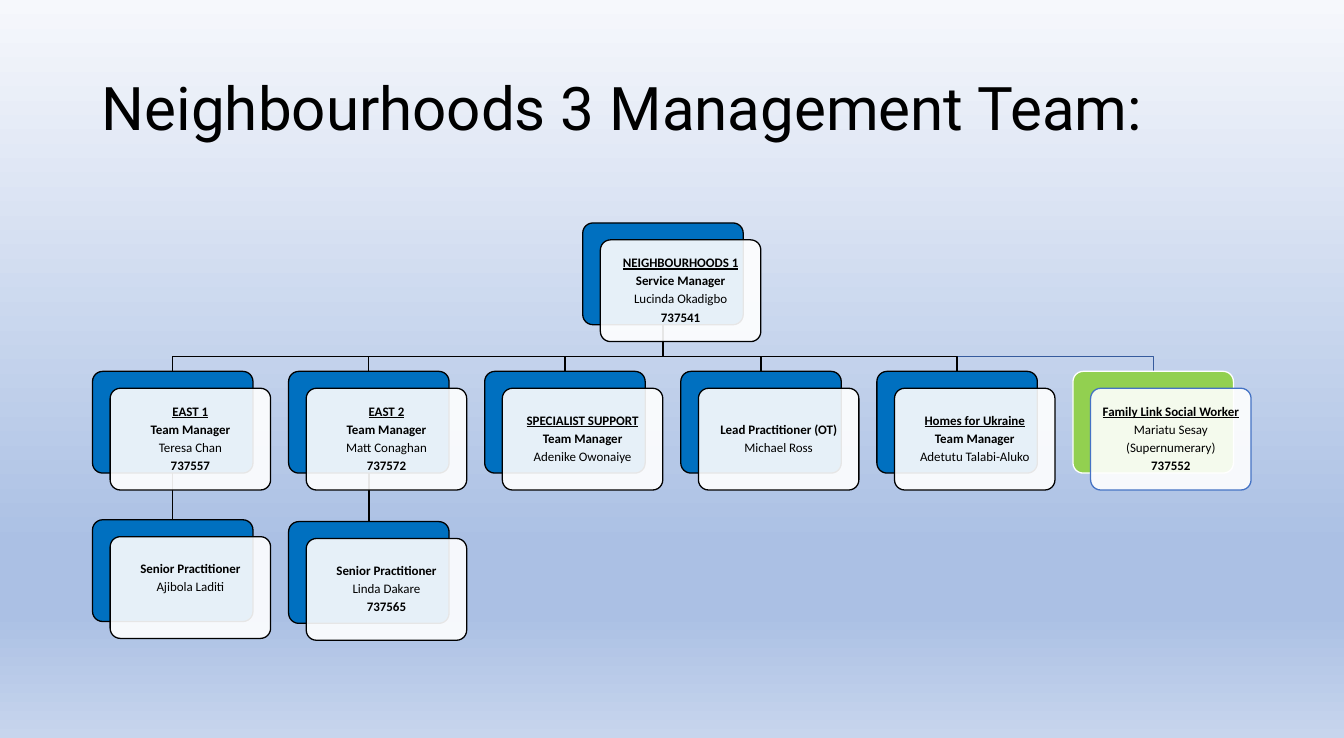
"""Builds the Neighbourhoods 3 management team chart."""
from dataclasses import dataclass

from lxml import etree
from pptx import Presentation
from pptx.dml.color import RGBColor
from pptx.enum import shapes, text
from pptx.oxml.ns import qn
from pptx.util import Cm, Pt


@dataclass(frozen=True)
class Theme:
    title_font: str = "Roboto"
    card_font: str = "Calibri"
    title_size: float = 46.4
    card_size: float = 10
    paragraph_gap: float = 3.2
    line_spacing: float = 0.9
    line_width: float = 1
    card_opacity: int = 90
    ink: str = "000000"
    paper: str = "FFFFFF"
    blue: str = "0070C0"
    green: str = "92D050"
    edge_blue: str = "4472C4"
    link_blue: str = "365B9D"
    backdrop: tuple = ((0, "F6F8FC"), (74, "ABC0E4"), (83, "ABC0E4"), (100, "C7D5ED"))


THEME = Theme()
CARD_WIDTH, CARD_HEIGHT = 4.37, 2.77
SHIFT_X, SHIFT_Y = 0.48, 0.46
FIRST_LEFT, PITCH = 2.52, 5.34
ROOT_TOP, RAIL_TOP, TEAM_TOP = 6.07, 9.7, 10.11
CARD_MARGIN = 0.1


@dataclass(frozen=True)
class Look:
    back: str = THEME.blue
    back_edge: str = THEME.ink
    front_edge: str = THEME.ink
    link: str = THEME.ink


@dataclass(frozen=True)
class Line:
    words: str
    bold: bool = False
    underline: bool = False


@dataclass(frozen=True)
class Card:
    column: float
    top: float
    lines: tuple[Line, ...]
    look: Look = Look()
    lift: float = 0

    @property
    def left(self) -> float:
        return FIRST_LEFT + self.column * PITCH

    @property
    def centre(self) -> float:
        return self.left + CARD_WIDTH / 2

    @property
    def bottom(self) -> float:
        return self.top + CARD_HEIGHT


def heading(words: str) -> Line:
    return Line(words, bold=True, underline=True)


def strong(words: str) -> Line:
    return Line(words, bold=True)


SUPERNUMERARY = Look(THEME.green, THEME.paper, THEME.edge_blue, THEME.link_blue)
MANAGER = Card(2.5, ROOT_TOP, (heading("NEIGHBOURHOODS 1"), strong("Service Manager"),
                               Line("Lucinda Okadigbo"), strong("737541")))
TEAMS = (
    Card(0, TEAM_TOP, (heading("EAST 1"), strong("Team Manager"),
                       Line("Teresa Chan"), strong("737557"))),
    Card(1, TEAM_TOP, (heading("EAST 2"), strong("Team Manager"),
                       Line("Matt Conaghan"), strong("737572"))),
    Card(2, TEAM_TOP, (heading("SPECIALIST SUPPORT"), strong("Team Manager"),
                       Line("Adenike Owonaiye"))),
    Card(3, TEAM_TOP, (strong("Lead Practitioner (OT)"), Line("Michael Ross"))),
    Card(4, TEAM_TOP, (heading("Homes for Ukraine"), strong("Team Manager"),
                       Line("Adetutu Talabi-Aluko"))),
    Card(5, TEAM_TOP, (heading("Family Link Social Worker"), Line("Mariatu Sesay"),
                       Line("(Supernumerary)"), strong("737552")), SUPERNUMERARY),
)
SENIORS = (
    Card(0, 14.15, (strong("Senior Practitioner"), Line("Ajibola Laditi")), lift=0.5),
    Card(1, 14.2, (strong("Senior Practitioner"), Line("Linda Dakare"), strong("737565"))),
)


def rgb(code: str) -> RGBColor:
    return RGBColor.from_string(code)


def paint_backdrop(page) -> None:
    fill = page.background.fill
    fill.gradient()
    fill.gradient_angle = 270
    stops = page.element.find(".//" + qn("a:gsLst"))
    for stop in list(stops):
        stops.remove(stop)
    for percent, code in THEME.backdrop:
        stop = etree.SubElement(stops, qn("a:gs"), pos=str(percent * 1000))
        etree.SubElement(stop, qn("a:srgbClr"), val=code)


def write_title(page, words: str) -> None:
    title = page.shapes.title
    title.left, title.top, title.width, title.height = Cm(2.52), Cm(1.07), Cm(31.57), Cm(3.88)
    frame = title.text_frame
    frame.text = words
    frame.auto_size = text.MSO_AUTO_SIZE.NONE
    frame.vertical_anchor = text.MSO_ANCHOR.MIDDLE
    para = frame.paragraphs[0]
    para.alignment = text.PP_ALIGN.LEFT
    para.line_spacing = THEME.line_spacing
    para.font.name, para.font.size = THEME.title_font, Pt(THEME.title_size)
    para.font.color.rgb = rgb(THEME.ink)


def style_line(line, code: str) -> None:
    line.color.rgb = rgb(code)
    line.width = Pt(THEME.line_width)


def link_from_manager(page, team: Card) -> None:
    builder = page.shapes.build_freeform(Cm(MANAGER.centre), Cm(MANAGER.bottom))
    corners = ((MANAGER.centre, RAIL_TOP), (team.centre, RAIL_TOP), (team.centre, team.top))
    builder.add_line_segments([(Cm(x), Cm(y)) for x, y in corners], close=False)
    elbow = builder.convert_to_shape()
    elbow.shadow.inherit = False
    elbow.fill.background()
    style_line(elbow.line, team.look.link)


def link_down(page, upper: Card, lower: Card) -> None:
    link = page.shapes.add_connector(shapes.MSO_CONNECTOR.STRAIGHT, Cm(upper.centre),
                                     Cm(upper.bottom), Cm(lower.centre), Cm(lower.top))
    style_line(link.line, lower.look.link)
    etree.SubElement(link.element.spPr, qn("a:effectLst"))


def add_panel(page, left: float, top: float, fill: str, edge: str):
    panel = page.shapes.add_shape(shapes.MSO_SHAPE.ROUNDED_RECTANGLE, Cm(left), Cm(top),
                                  Cm(CARD_WIDTH), Cm(CARD_HEIGHT))
    panel.adjustments[0] = 0.1
    panel.shadow.inherit = False
    panel.fill.solid()
    panel.fill.fore_color.rgb = rgb(fill)
    style_line(panel.line, edge)
    return panel


def write_lines(frame, card: Card) -> None:
    frame.word_wrap = True
    frame.vertical_anchor = text.MSO_ANCHOR.MIDDLE
    frame.margin_left = frame.margin_right = frame.margin_top = Cm(CARD_MARGIN)
    frame.margin_bottom = Cm(CARD_MARGIN + card.lift)
    frame.text = "\n".join(line.words for line in card.lines)
    for para, line in zip(frame.paragraphs, card.lines):
        para.alignment = text.PP_ALIGN.CENTER
        para.line_spacing = THEME.line_spacing
        para.space_after = Pt(THEME.paragraph_gap)
        para.font.name, para.font.size = THEME.card_font, Pt(THEME.card_size)
        para.font.bold, para.font.underline = line.bold, line.underline
        para.font.color.rgb = rgb(THEME.ink)


def draw_card(page, card: Card) -> None:
    add_panel(page, card.left, card.top, card.look.back, card.look.back_edge)
    front = add_panel(page, card.left + SHIFT_X, card.top + SHIFT_Y,
                      THEME.paper, card.look.front_edge)
    tint = front.element.spPr.find(qn("a:solidFill")).find(qn("a:srgbClr"))
    etree.SubElement(tint, qn("a:alpha"), val=str(THEME.card_opacity * 1000))
    write_lines(front.text_frame, card)


def main() -> None:
    deck = Presentation()
    deck.slide_width, deck.slide_height = Cm(36.6), Cm(20.09)
    page = deck.slides.add_slide(deck.slide_layouts[5])
    paint_backdrop(page)
    write_title(page, "Neighbourhoods 3 Management Team:")
    for team in reversed(TEAMS):
        link_from_manager(page, team)
    for team, senior in zip(TEAMS, SENIORS):
        link_down(page, team, senior)
    for card in (MANAGER, *TEAMS, *SENIORS):
        draw_card(page, card)
    deck.save("out.pptx")


if __name__ == "__main__":
    main()
